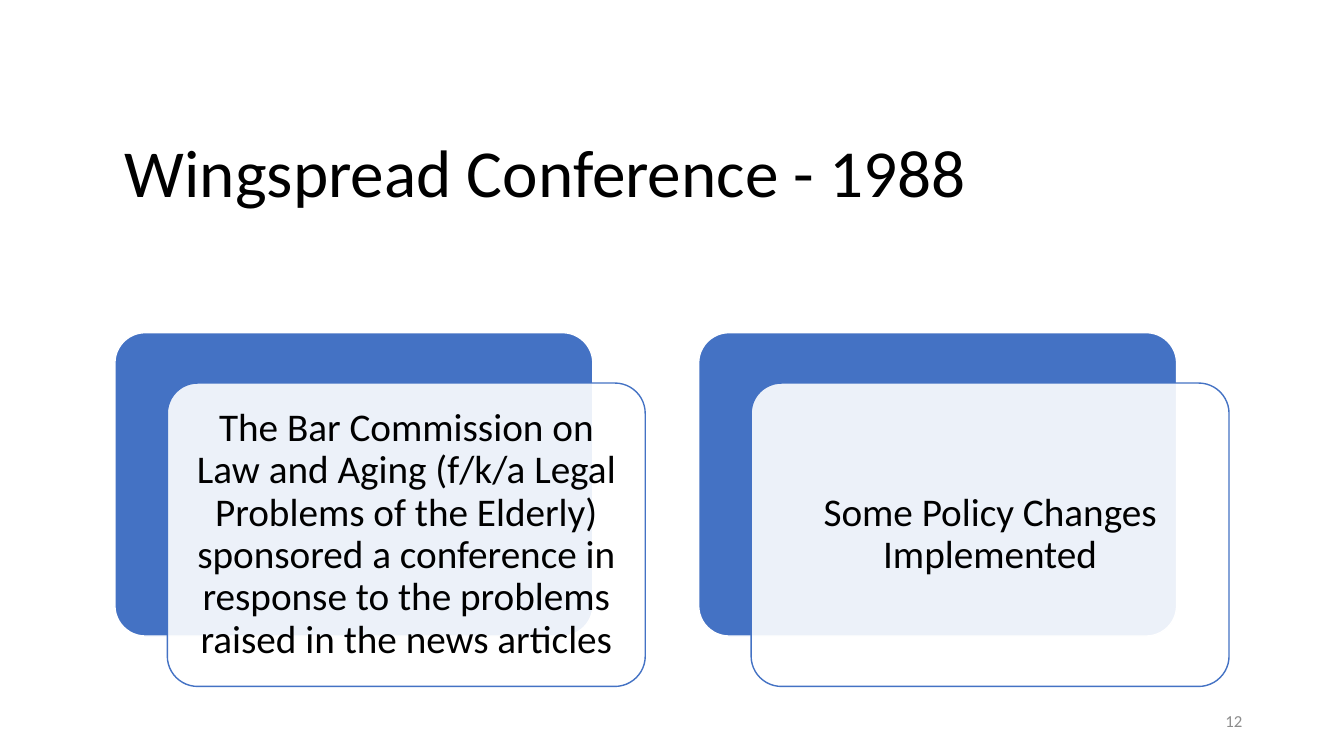
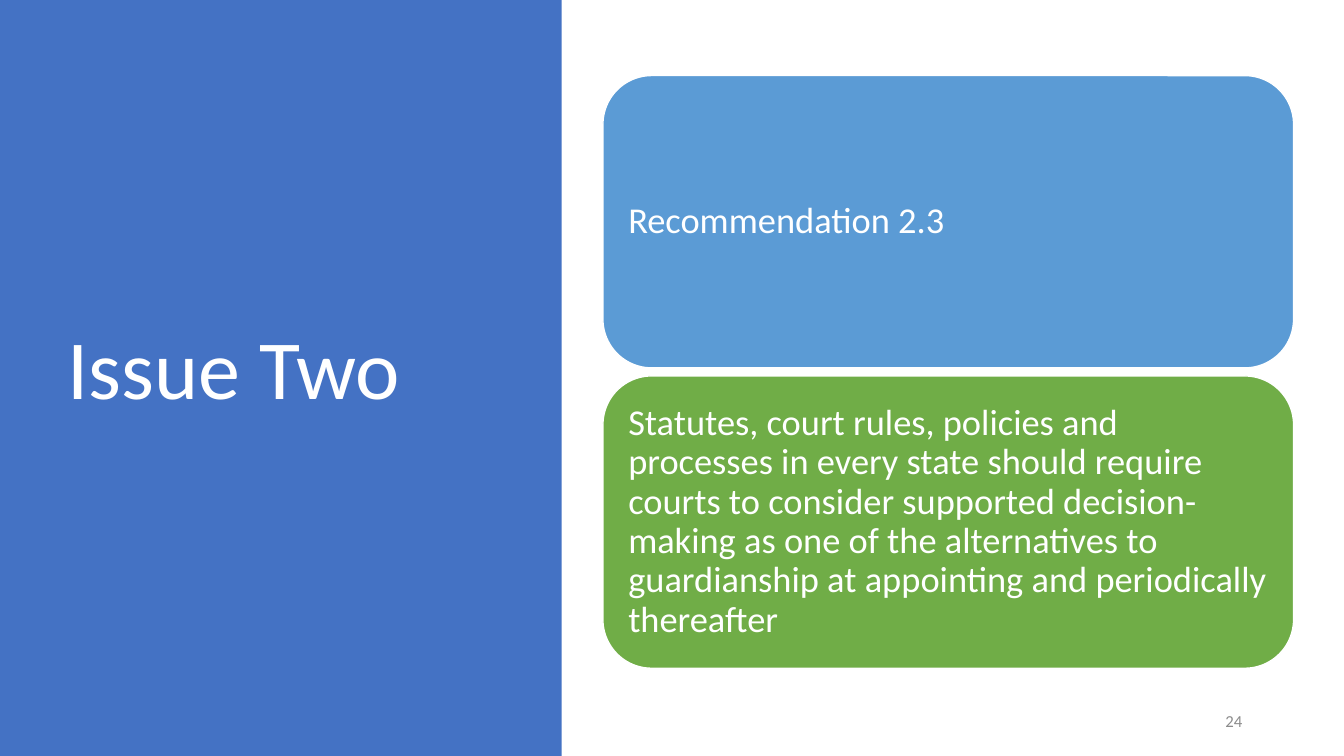
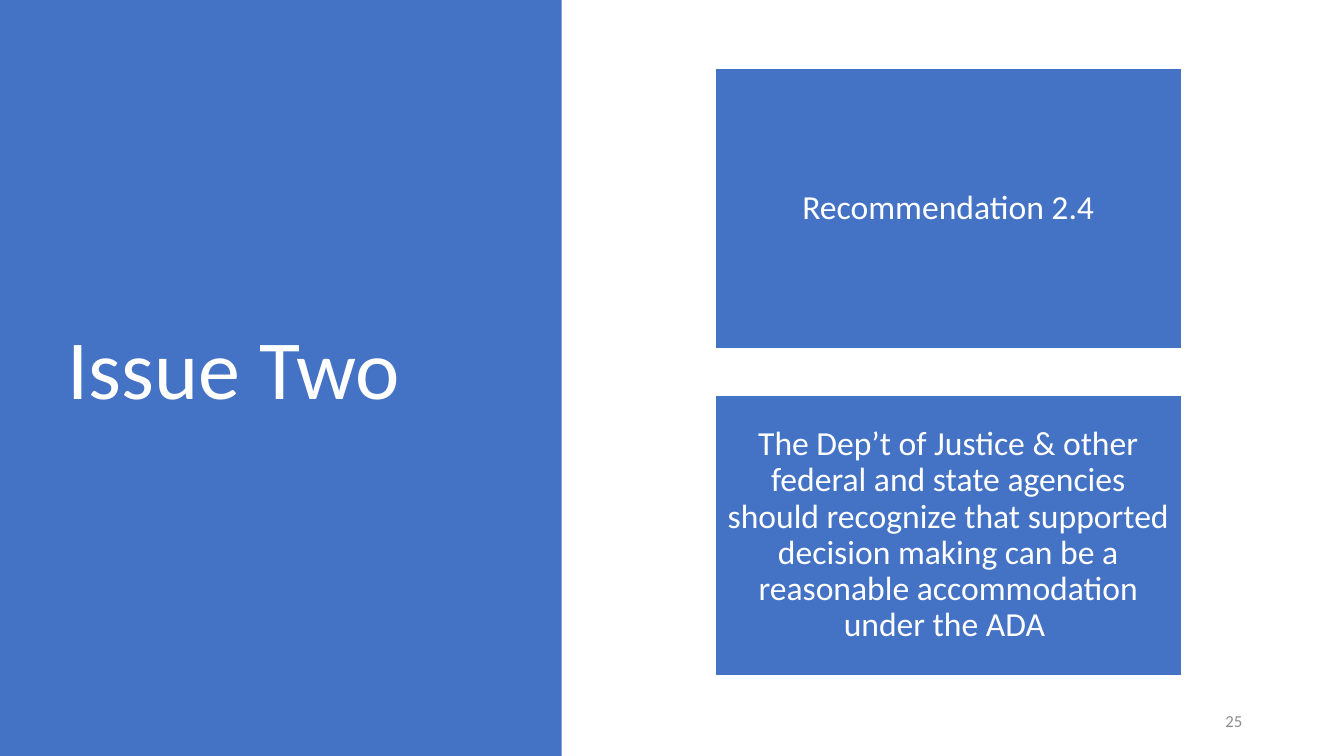
from lxml import etree
from pptx import Presentation, util as u
from pptx.dml.color import RGBColor
from pptx.enum import shapes, text
from pptx.oxml.ns import qn

PX = 9144  # 100 px to the inch
HEX = {"blue": "4472C4", "sky": "5B9BD5", "green": "70AD47",
       "white": "FFFFFF", "black": "000000", "gray": "8C8C8C"}
RECT, ROUND = shapes.MSO_SHAPE.RECTANGLE, shapes.MSO_SHAPE.ROUNDED_RECTANGLE
LEFT, MID, RIGHT = text.PP_ALIGN.LEFT, text.PP_ALIGN.CENTER, text.PP_ALIGN.RIGHT

deck = Presentation()
deck.slide_width, deck.slide_height = 1333 * PX, 750 * PX


def write(shape, words, size, color, align=LEFT, pad=None, lead=0.9):
    """Fill a shape or text box with one middle-anchored paragraph."""
    frame = shape.text_frame
    frame.word_wrap = True
    frame.vertical_anchor = text.MSO_ANCHOR.MIDDLE
    if pad is not None:
        frame.margin_left = frame.margin_right = pad * PX
        frame.margin_top = frame.margin_bottom = pad * PX
    para = frame.paragraphs[0]
    para.text = words
    para.alignment, para.line_spacing = align, lead
    para.font.name, para.font.size = "Calibri", u.Pt(size)
    para.font.color.rgb = RGBColor.from_string(HEX[color])


def panel(slide, kind, box, fill, line=None):
    shape = slide.shapes.add_shape(kind, *[n * PX for n in box])
    shape.shadow.inherit = False
    shape.fill.solid()
    shape.fill.fore_color.rgb = RGBColor.from_string(HEX[fill])
    if line:
        shape.line.color.rgb = RGBColor.from_string(HEX[line])
        shape.line.width = u.Pt(1)
    else:
        shape.line.fill.background()
    return shape


# Shared frame: side band, title and slide number
pages = []
for title, num, band in [("Wingspread Conference - 1988", 12, False),
                         ("Issue Two", 24, True),
                         ("Issue Two", 25, True)]:
    slide = deck.slides.add_slide(deck.slide_layouts[6])
    if band:
        panel(slide, RECT, (0, 0, 557, 750), "blue")
        box, size, color = (57, 68, 416, 602), 60, "white"
    else:
        box, size, color = (114, 89, 1113, 170), 48, "black"
    head = slide.shapes.add_textbox(*[n * PX for n in box])
    write(head, title, size, color)
    foot = slide.shapes.add_textbox(942 * PX, 695 * PX, 300 * PX, 40 * PX)
    write(foot, str(num), 12, "gray", RIGHT, lead=1.0)
    pages.append(slide)

# Conference: pairs of overlapping cards
cards = ["The Bar Commission on Law and Aging (f/k/a Legal Problems of the "
         "Elderly) sponsored a conference in response to the problems raised "
         "in the news articles",
         "Some Policy Changes Implemented"]
for i, words in enumerate(cards):
    x, y = 114 + 579 * i, 330
    back = panel(pages[0], ROUND, (x, y, 474, 301), "blue", "white")
    front = panel(pages[0], ROUND, (x + 52, y + 50, 474, 301), "white", "blue")
    back.adjustments[0] = front.adjustments[0] = 0.1
    tint = front.element.spPr.find(qn("a:solidFill"))[0]
    etree.SubElement(tint, qn("a:alpha"), val="90000")
    write(front, words, 28, "black", MID, 12)

# Recommendation 2.3: stacked round panels
rules = [("Recommendation 2.3", "sky"),
         ("Statutes, court rules, policies and processes in every state should "
          "require courts to consider supported decision-making as one of the "
          "alternatives to guardianship at appointing and periodically "
          "thereafter", "green")]
for i, (words, color) in enumerate(rules):
    tile = panel(pages[1], ROUND, (598, 75 + 298 * i, 685, 290), color, "white")
    write(tile, words, 26, "white", LEFT, 11)

# Recommendation 2.4: stacked square panels
rules = ["Recommendation 2.4",
         "The Dep’t of Justice & other federal and state agencies should "
         "recognize that supported decision making can be a reasonable "
         "accommodation under the ADA "]
for i, words in enumerate(rules):
    tile = panel(pages[2], RECT, (709, 68 + 324 * i, 463, 278), "blue", "white")
    write(tile, words, 24, "white", MID, 10)

deck.save("out.pptx")
